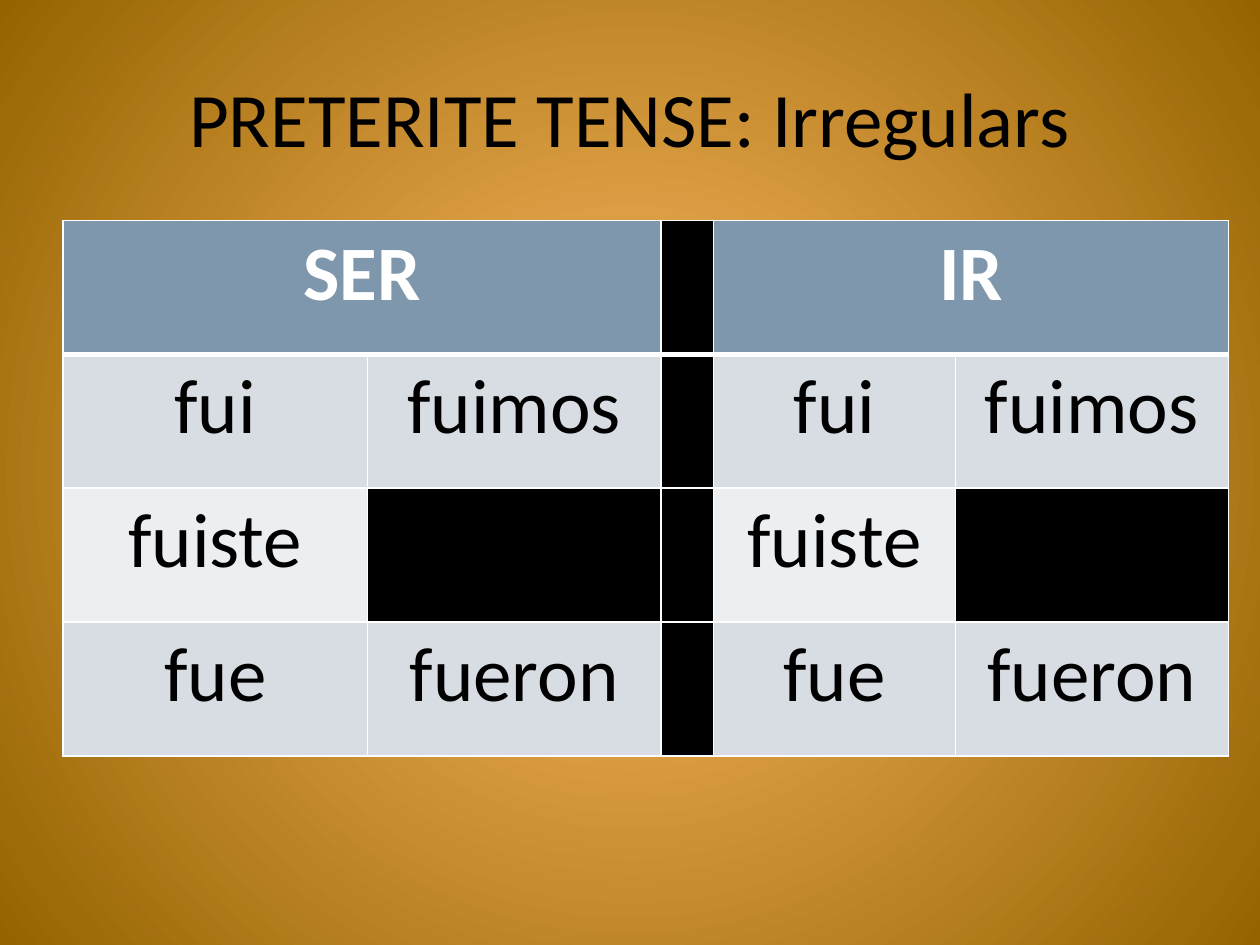
from lxml.etree import SubElement
from pptx import Presentation
from pptx.dml.color import RGBColor
from pptx.enum.text import MSO_ANCHOR, PP_ALIGN
from pptx.oxml.ns import qn
from pptx.util import Inches, Pt

BLACK = RGBColor(0x00, 0x00, 0x00)
WHITE = RGBColor(0xFF, 0xFF, 0xFF)
GLOW = RGBColor(0xFF, 0xBA, 0x65)
BRONZE = RGBColor(0x95, 0x64, 0x00)
HEADER_BLUE = RGBColor(0x7E, 0x97, 0xAD)
BAND_DARK = RGBColor(0xD8, 0xDD, 0xE3)
BAND_LIGHT = RGBColor(0xEC, 0xEF, 0xF1)

BODY_FORMAT = {"name": "Calibri", "size": Pt(44), "bold": False}
HEADER_FORMAT = {**BODY_FORMAT, "bold": True}

COLUMN_WIDTHS = [2.42, 2.33, 0.42, 1.92, 2.17]
VERBS = ["SER", "IR"]
VERB_COLUMNS = [0, 3]
# Both verbs share the same forms: (singular, plural) for each person.
FORMS = [("fui", "fuimos"), ("fuiste", ""), ("fue", "fueron")]


def write_text(text_frame, text, color, font_format):
    text_frame.text = text
    paragraph = text_frame.paragraphs[0]
    paragraph.alignment = PP_ALIGN.CENTER
    font = paragraph.runs[0].font
    for name, value in font_format.items():
        setattr(font, name, value)
    font.color.rgb = color


def set_background(slide):
    """Fill the slide with a gradient that spreads from its centre."""
    fill = slide.background.fill
    fill.gradient()
    for stop, color, position in zip(fill.gradient_stops, (GLOW, BRONZE), (0, 1)):
        stop.color.rgb = color
        stop.position = position
    gradient = slide.background._cSld.find(".//" + qn("a:gradFill"))
    gradient.remove(gradient.find(qn("a:lin")))
    circle = SubElement(gradient, qn("a:path"), path="circle")
    SubElement(circle, qn("a:fillToRect"), l="50000", t="50000", r="50000", b="50000")


def place_title(slide, text, left, top, width, height):
    title = slide.shapes.title
    box = {"left": left, "top": top, "width": width, "height": height}
    for name, value in box.items():
        setattr(title, name, Inches(value))
    title.text_frame.vertical_anchor = MSO_ANCHOR.MIDDLE
    write_text(title.text_frame, text, BLACK, BODY_FORMAT)


def set_borders(cell, widths):
    properties = cell._tc.get_or_add_tcPr()
    for side, width in zip("LRTB", widths):
        line = SubElement(properties, qn(f"a:ln{side}"), w=str(Pt(width)))
        solid = SubElement(line, qn("a:solidFill"))
        SubElement(solid, qn("a:srgbClr"), val=str(WHITE))


def style_cell(cell, row, text, color):
    set_borders(cell, (1, 1, 3 if row == 1 else 1, 3 if row == 0 else 1))
    cell.fill.solid()
    cell.fill.fore_color.rgb = color
    if text:
        header = row == 0
        write_text(cell.text_frame, text, WHITE if header else BLACK,
                   HEADER_FORMAT if header else BODY_FORMAT)


def add_conjugation_table(slide, left, top, width, height):
    rows = [[VERBS[0], "", "", VERBS[1], ""]]
    rows += [[singular, plural, "", singular, plural] for singular, plural in FORMS]
    box = [Inches(value) for value in (left, top, width, height)]
    table = slide.shapes.add_table(len(rows), len(COLUMN_WIDTHS), *box).table
    for column, share in zip(table.columns, COLUMN_WIDTHS):
        column.width = Inches(width * share / sum(COLUMN_WIDTHS))
    for column in VERB_COLUMNS:
        table.cell(0, column).merge(table.cell(0, column + 1))

    for row, texts in enumerate(rows):
        band = BAND_DARK if row % 2 else BAND_LIGHT
        for column, text in enumerate(texts):
            cell = table.cell(row, column)
            if row == 0 and (text or cell.is_spanned):
                color = HEADER_BLUE
            else:
                color = band if text else BLACK
            style_cell(cell, row, text, color)


def main():
    presentation = Presentation()
    presentation.slide_width = Inches(10)
    presentation.slide_height = Inches(7.5)
    slide = presentation.slides.add_slide(presentation.slide_layouts[5])
    set_background(slide)
    place_title(slide, "PRETERITE TENSE: Irregulars", 0.5, 0.3, 9, 1.25)
    add_conjugation_table(slide, 0.5, 1.75, 9.25, 4.25)
    presentation.save("out.pptx")


if __name__ == "__main__":
    main()
